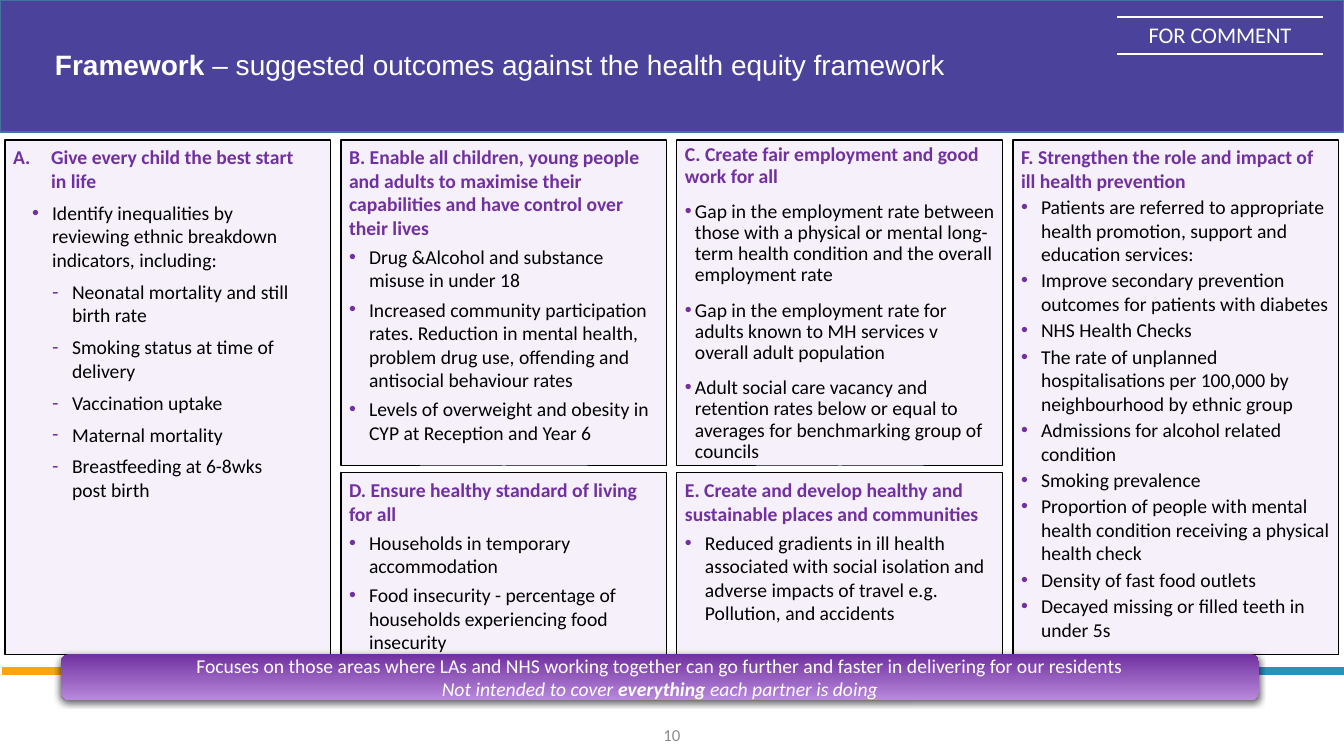
"""Build the health equity framework slide with six outcome panels."""
import lxml.etree
import pptx
import pptx.dml.color
import pptx.enum.shapes
import pptx.enum.text
import pptx.oxml
import pptx.oxml.ns
import pptx.util

RGBColor = pptx.dml.color.RGBColor
SHAPE = pptx.enum.shapes.MSO_SHAPE
ANCHOR = pptx.enum.text.MSO_ANCHOR
CENTER = pptx.enum.text.PP_ALIGN.CENTER
Pt = pptx.util.Pt
qn = pptx.oxml.ns.qn
NS = 'xmlns:a="http://schemas.openxmlformats.org/drawingml/2006/main"'

WHITE = RGBColor(0xFF, 0xFF, 0xFF)
BLACK = RGBColor(0x00, 0x00, 0x00)
GREY = RGBColor(0x8C, 0x8C, 0x8C)
INDIGO = RGBColor(0x4B, 0x42, 0x9B)
STEEL = RGBColor(0x43, 0x73, 0x9E)
AMBER = RGBColor(0xF9, 0xA5, 0x0E)
BLUE = RGBColor(0x2A, 0x90, 0xC0)
PURPLE = RGBColor(0x70, 0x30, 0xA0)
LILAC = RGBColor(0xB8, 0x89, 0xDB)
PALE = RGBColor(0xF6, 0xF0, 0xFA)


def px(n):
    return round(n * 914400 / 100.8)


def add_text(tf, text, p=None, size=14, color=WHITE, bold=False, italic=False, font="Calibri",
             align=None, before=0, after=0, spacing=None, bullet=None, left=0, hang=0, level=0):
    if p is None:
        p = tf.paragraphs[0]
        if p.runs:
            p = tf.add_paragraph()
        p.level = level
        p.alignment = align
        p.space_before, p.space_after = Pt(before), Pt(after)
        p.line_spacing = spacing
        pPr = p._p.get_or_add_pPr()
        pPr.set("marL", str(px(left)))
        pPr.set("indent", str(-px(hang)))
        if bullet:
            pPr.append(pptx.oxml.parse_xml(f'<a:buClr {NS}><a:srgbClr val="{PURPLE}"/></a:buClr>'))
            if bullet == "A.":
                mark = '<a:buAutoNum {} type="alphaUcPeriod"/>'.format(NS)
            else:
                pPr.append(pptx.oxml.parse_xml(f'<a:buFont {NS} typeface="Arial"/>'))
                mark = f'<a:buChar {NS} char="{bullet}"/>'
            pPr.append(pptx.oxml.parse_xml(mark))
    r = p.add_run()
    r.text = text
    r.font.name, r.font.size, r.font.color.rgb = font, Pt(size), color
    r.font.bold, r.font.italic = bold, italic
    return p


prs = pptx.Presentation()
prs.slide_width, prs.slide_height = px(1344), px(756)
s = prs.slides.add_slide(prs.slide_layouts[6])

header = s.shapes.add_shape(SHAPE.RECTANGLE, 0, 0, px(1344), px(132))
header.shadow.inherit = False
header.fill.solid()
header.fill.fore_color.rgb = INDIGO
header.line.color.rgb = STEEL
header.line.width = Pt(1)

for x1, x2, color in [(2, 327, AMBER), (1022, 1344, BLUE)]:
    strip = s.shapes.add_connector(pptx.enum.shapes.MSO_CONNECTOR.STRAIGHT,
                                   px(x1), px(671), px(x2), px(671))
    strip.line.color.rgb = color
    strip.line.width = Pt(6)
    lxml.etree.SubElement(strip._element.spPr, qn("a:effectLst"))

title = s.shapes.add_textbox(px(45), px(36), px(1254), px(60))
tf = title.text_frame
tf.word_wrap = True
tf.vertical_anchor = ANCHOR.MIDDLE
p = add_text(tf, "Framework", size=20, font="Arial", bold=True, spacing=0.9)
add_text(tf, " – suggested outcomes against the health equity framework", p=p, size=20, font="Arial")

number = s.shapes.add_textbox(px(521), px(715), px(302), px(40))
number.text_frame.word_wrap = True
number.text_frame.vertical_anchor = ANCHOR.MIDDLE
add_text(number.text_frame, "10", size=12, color=GREY, align=CENTER)

frame = s.shapes.add_table(1, 1, px(1117), px(17), px(206), px(37))
frame.table.first_row = frame.table.horz_banding = False
cell = frame.table.cell(0, 0)
cell.fill.background()
cell.vertical_anchor = ANCHOR.BOTTOM
cell.margin_left = cell.margin_right = px(4)
cell.margin_top = cell.margin_bottom = px(5)
add_text(cell.text_frame, "FOR COMMENT", size=16, align=CENTER)
no_line = "<a:noFill/>"
white_line = f'<a:solidFill><a:srgbClr val="{WHITE}"/></a:solidFill>'
for i, (side, paint) in enumerate(zip("LRTB", [no_line, no_line, white_line, white_line])):
    border = pptx.oxml.parse_xml(f'<a:ln{side} {NS} w="12700">{paint}</a:ln{side}>')
    cell._tc.get_or_add_tcPr().insert(i, border)

COLUMN_LEFT, COLUMN_STEP, COLUMN_WIDTH = 5, 336, 326
TOP, LOWER_TOP, BOTTOM, UPPER_HEIGHT = 140, 473, 655, 326
FULL_HEIGHT, LOWER_HEIGHT = BOTTOM - TOP, BOTTOM - LOWER_TOP
BULLET = dict(bullet="•", left=20, hang=20)
LOOSE, TIGHT = dict(after=4), dict(after=2)

panels = [
    (0, TOP, FULL_HEIGHT, 31, dict(after=6), dict(bullet="A.", left=38, hang=38),
     dict(bullet="•", left=39, hang=20), "Give every child the best start in life",
     ["Identify inequalities by reviewing ethnic breakdown indicators, including:",
      "- Neonatal mortality and still birth rate",
      "- Smoking status at time of delivery",
      "- Vaccination uptake",
      "- Maternal mortality",
      "- Breastfeeding at 6-8wks post birth"]),
    (1, TOP, UPPER_HEIGHT, 8, LOOSE, {}, BULLET,
     "B. Enable all children, young people and adults to maximise their capabilities "
     "and have control over their lives",
     ["Drug &Alcohol and substance misuse in under 18",
      "Increased community participation rates. Reduction in mental health, problem drug use, "
      "offending and antisocial behaviour rates",
      "Levels of overweight and obesity in CYP at Reception and Year 6"]),
    (2, TOP, UPPER_HEIGHT, 8, dict(spacing=0.9), {},
     dict(bullet="•", left=10, hang=10, before=10),
     "C. Create fair employment and good work for all",
     ["Gap in the employment rate between those with a physical or mental long- term health "
      "condition and the overall employment rate",
      "Gap in the employment rate for adults known to MH services v overall adult population",
      "Adult social care vacancy and retention rates below or equal to averages for "
      "benchmarking group of councils"]),
    (1, LOWER_TOP, LOWER_HEIGHT, 8, LOOSE, {}, BULLET,
     "D. Ensure healthy standard of living for all",
     ["Households in temporary accommodation",
      "Food insecurity - percentage of households experiencing food insecurity"]),
    (2, LOWER_TOP, LOWER_HEIGHT, 8, LOOSE, {}, BULLET,
     "E. Create and develop healthy and sustainable places and communities",
     ["Reduced gradients in ill health associated with social isolation and adverse impacts "
      "of travel e.g. Pollution, and accidents"]),
    (3, TOP, FULL_HEIGHT, 8, TIGHT, {}, BULLET,
     "F. Strengthen the role and impact of ill health prevention",
     ["Patients are referred to appropriate health promotion, support and education services:",
      "Improve secondary prevention outcomes for patients with diabetes",
      "NHS Health Checks",
      "The rate of unplanned hospitalisations per 100,000 by neighbourhood by ethnic group",
      "Admissions for alcohol related condition",
      "Smoking prevalence",
      "Proportion of people with mental health condition receiving a physical health check",
      "Density of fast food outlets",
      "Decayed missing or filled teeth in under 5s"]),
]
for column, top, height, right, gaps, heading_style, item_style, heading, items in panels:
    sp = s.shapes.add_shape(SHAPE.RECTANGLE, px(COLUMN_LEFT + COLUMN_STEP * column), px(top),
                            px(COLUMN_WIDTH), px(height))
    sp.shadow.inherit = False
    sp.fill.solid()
    sp.fill.fore_color.rgb = PALE
    sp.line.color.rgb = BLACK
    sp.line.width = Pt(0.75)
    tf = sp.text_frame
    tf.word_wrap = True
    tf.vertical_anchor = ANCHOR.TOP
    tf.margin_left, tf.margin_right = px(8), px(right)
    tf.margin_top = tf.margin_bottom = px(5)
    left_align = pptx.enum.text.PP_ALIGN.LEFT
    add_text(tf, heading, color=PURPLE, bold=True, align=left_align, **gaps, **heading_style)
    for item in items:
        style = item_style
        if item.startswith("- "):
            style = dict(bullet="-", left=59, hang=20, level=1)
        add_text(tf, item.removeprefix("- "), color=BLACK, align=left_align, **gaps, **style)

banner = s.shapes.add_shape(SHAPE.ROUNDED_RECTANGLE, px(61), px(654), px(1198), px(46))
banner.line.fill.background()
banner.fill.gradient()
banner.fill.gradient_angle = 270
for stop, color in zip(banner.fill.gradient_stops, [PURPLE, LILAC]):
    stop.color.rgb = color
banner.shadow.inherit = False
banner._element.spPr.find(qn("a:effectLst")).append(pptx.oxml.parse_xml(
    f'<a:outerShdw {NS} blurRad="57150" dist="19050" dir="5400000" algn="ctr" rotWithShape="0">'
    f'<a:srgbClr val="{BLACK}"><a:alpha val="63000"/></a:srgbClr></a:outerShdw>'))
tf = banner.text_frame
tf.word_wrap = True
tf.vertical_anchor = ANCHOR.MIDDLE
add_text(tf, "Focuses on those areas where LAs and NHS working together can go further and faster "
         "in delivering for our residents", align=CENTER)
p = add_text(tf, "Not intended to cover ", italic=True, align=CENTER)
add_text(tf, "everything", p=p, italic=True, bold=True)
add_text(tf, " each partner is doing", p=p, italic=True)

prs.save("out.pptx")
